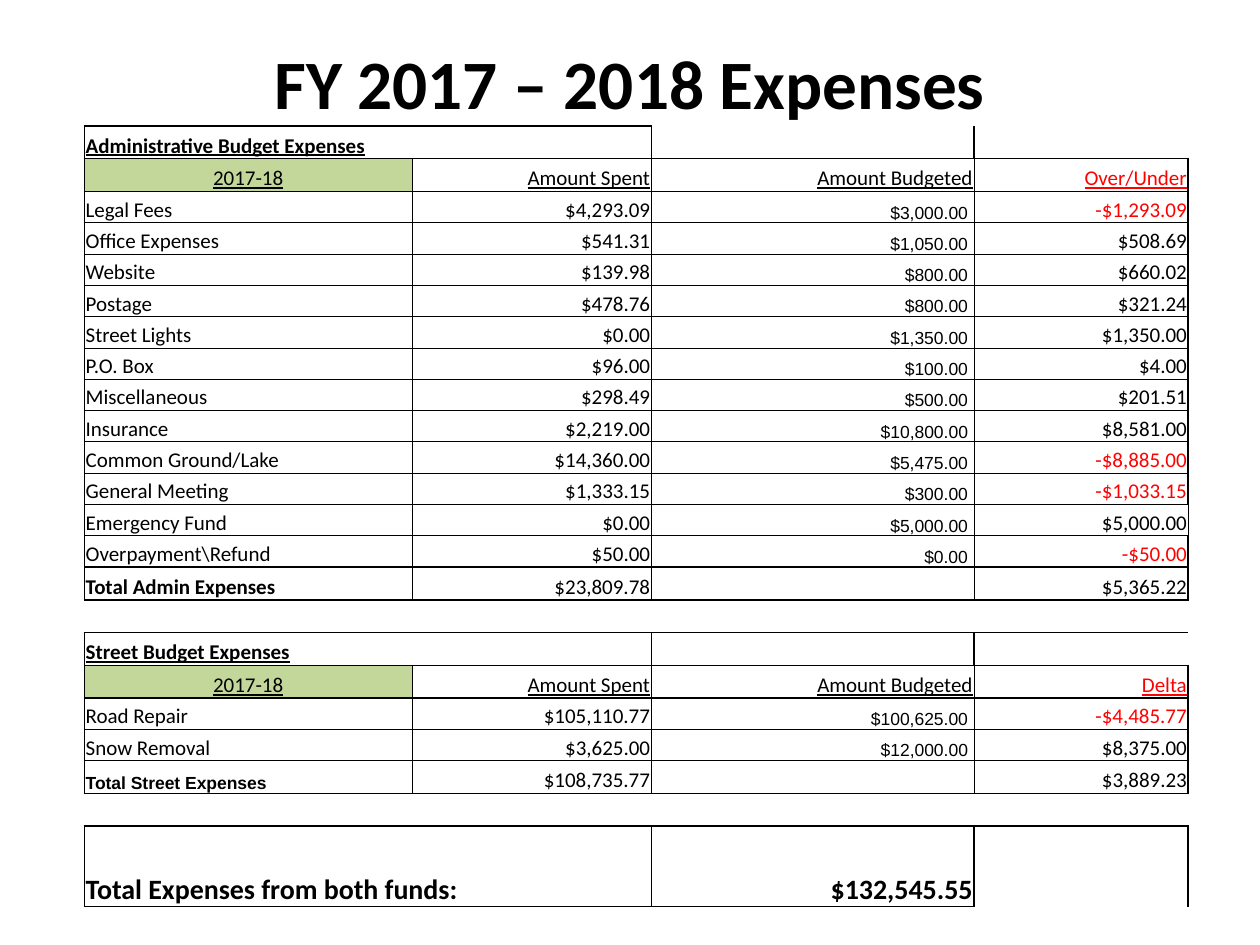
from dataclasses import dataclass
from enum import Enum

from lxml.etree import SubElement
from pptx import Presentation
from pptx.dml.color import RGBColor
from pptx.enum.text import MSO_ANCHOR, PP_ALIGN
from pptx.oxml.ns import qn
from pptx.util import Inches, Pt

BLACK, WHITE, RED, GREEN = "000000", "FFFFFF", "FF0000", "C4D79B"
NO_STYLE = "{2D5ABB26-0587-4C30-8999-92F81FD0307C}"
COLUMN_WIDTHS = (1.01, 1.59, 1.9, 2.56, 1.7)
TABLE_HEIGHT, GRAND_HEIGHT, PLAIN_HEIGHT = 6.2, 0.64, 0.26
BUDGET, DIFFERENCE = 3, 4
THIN, THICK = 0.5, 1


class Kind(Enum):
    """Row kinds, each with its merged label columns and its boxed columns."""

    SECTION = ("section", 3, 3)
    HEADER = ("header", 2, 5)
    ITEM = ("item", 2, 5)
    TOTAL = ("total", 2, 5)
    BLANK = ("blank", 1, 0)
    GRAND = ("grand", 3, 4)

    @property
    def label_span(self) -> int:
        return self.value[1]

    @property
    def boxed(self) -> int:
        return self.value[2]


@dataclass
class Row:
    """One table row: its kind, label, and the values after the label."""

    kind: Kind
    label: str = ""
    values: tuple[str, ...] = ()
    label_font: str = "Calibri"
    label_size: float = 12
    outer: float = THICK


def item(label: str, spent: str, budgeted: str, difference: str, outer: float = THICK) -> Row:
    """Return a row for one expense."""
    return Row(Kind.ITEM, label, (spent, budgeted + " ", difference), outer=outer)


def header(difference: str) -> Row:
    """Return a row of column headings."""
    return Row(Kind.HEADER, "2017-18", ("Amount Spent", "Amount Budgeted", difference))


ROWS = [
    Row(Kind.SECTION, "Administrative Budget Expenses"),
    header("Over/Under"),
    item("Legal Fees", "$4,293.09", "$3,000.00", "-$1,293.09"),
    item("Office Expenses", "$541.31", "$1,050.00", "$508.69"),
    item("Website", "$139.98", "$800.00", "$660.02"),
    item("Postage", "$478.76", "$800.00", "$321.24"),
    item("Street Lights", "$0.00", "$1,350.00", "$1,350.00"),
    item("P.O. Box", "$96.00", "$100.00", "$4.00"),
    item("Miscellaneous", "$298.49", "$500.00", "$201.51"),
    item("Insurance", "$2,219.00", "$10,800.00", "$8,581.00"),
    item("Common Ground/Lake", "$14,360.00", "$5,475.00", "-$8,885.00"),
    item("General Meeting", "$1,333.15", "$300.00", "-$1,033.15"),
    item("Emergency Fund", "$0.00", "$5,000.00", "$5,000.00", outer=THIN),
    item("Overpayment\\Refund", "$50.00", "$0.00", "-$50.00"),
    Row(Kind.TOTAL, "Total Admin Expenses", ("$23,809.78", "", "$5,365.22")),
    Row(Kind.BLANK),
    Row(Kind.SECTION, "Street Budget Expenses"),
    header("Delta"),
    item("Road Repair", "$105,110.77", "$100,625.00", "-$4,485.77"),
    item("Snow Removal", "$3,625.00", "$12,000.00", "$8,375.00"),
    Row(Kind.TOTAL, "Total Street Expenses", ("$108,735.77", "", "$3,889.23"), "Arial", 10),
    Row(Kind.BLANK),
    Row(Kind.GRAND, "Total Expenses from both funds:", ("$132,545.55",), label_size=16),
]


def color(value: str) -> RGBColor:
    """Turn a hex string into a colour."""
    return RGBColor.from_string(value)


def write(paragraph, text: str, font_name: str, size: float, ink: str = BLACK,
          bold: bool = False, underline: bool = False, align=PP_ALIGN.LEFT) -> None:
    """Fill a paragraph with text in one font."""
    paragraph.alignment = align
    font = paragraph.font
    font.name, font.size = font_name, Pt(size)
    font.bold, font.underline = bold, underline
    font.color.rgb = color(ink)
    if text:
        paragraph.add_run().text = text
    else:
        SubElement(paragraph._p, qn("a:endParaRPr"), sz=str(int(size * 100)))


def horizontal_edge(upper: int, column: int) -> float:
    """Return the line width below row number upper, or zero for none."""
    pair = [ROWS[index] for index in (upper, upper + 1) if 0 <= index < len(ROWS)]
    if not any(column < row.kind.boxed for row in pair):
        return 0
    return THIN if all(row.kind is Kind.ITEM for row in pair) and len(pair) == 2 else THICK


def vertical_edge(row: Row, column: int) -> float:
    """Return the line width left of a column, or zero for none."""
    if row.kind is Kind.BLANK or column > row.kind.boxed:
        return 0
    return row.outer if column in (0, row.kind.boxed) else THIN


def add_border(cell, side: str, width: float) -> None:
    """Draw one side of a cell."""
    line = SubElement(cell._tc.get_or_add_tcPr(), qn(f"a:ln{side}"), w=str(Pt(width)))
    fill = SubElement(line, qn("a:solidFill"))
    SubElement(fill, qn("a:srgbClr"), val=BLACK)


def format_cell(cell, row_number: int, column: int) -> None:
    """Set the margins, borders and fill of a cell."""
    row = ROWS[row_number]
    span = row.kind.label_span
    first, end = (0, span) if column < span else (column, column + 1)
    cell.margin_left = cell.margin_right = cell.margin_top = Inches(0.01)
    cell.margin_bottom = Inches(0)
    cell.vertical_anchor = MSO_ANCHOR.BOTTOM
    edges = {
        "L": vertical_edge(row, first),
        "R": vertical_edge(row, end),
        "T": horizontal_edge(row_number - 1, column),
        "B": horizontal_edge(row_number, column),
    }
    for side, width in edges.items():
        if width:
            add_border(cell, side, width)
    if row.kind is Kind.ITEM and column == BUDGET:
        cell.fill.background()
    else:
        cell.fill.solid()
        is_year = row.kind is Kind.HEADER and column < span
        cell.fill.fore_color.rgb = color(GREEN if is_year else WHITE)


def write_cell(cell, row: Row, column: int) -> None:
    """Write the text that belongs in a cell."""
    paragraph = cell.text_frame.paragraphs[0]
    kind = row.kind
    is_header, is_grand = kind is Kind.HEADER, kind is Kind.GRAND
    value_number = column - kind.label_span
    if column == 0 and row.label:
        write(paragraph, row.label, row.label_font, row.label_size,
              bold=kind in (Kind.SECTION, Kind.TOTAL, Kind.GRAND),
              underline=is_header or kind is Kind.SECTION,
              align=PP_ALIGN.CENTER if is_header else PP_ALIGN.LEFT)
    elif 0 <= value_number < len(row.values):
        text = row.values[value_number]
        is_red = text.startswith("-") or (is_header and column == DIFFERENCE)
        is_budget = kind is Kind.ITEM and column == BUDGET
        write(paragraph, text, "Arial" if is_budget else "Calibri",
              10 if is_budget else row.label_size if is_grand else 12,
              RED if is_red else BLACK, is_grand, is_header, PP_ALIGN.RIGHT)
    else:
        write(paragraph, "", "Calibri", 10)


def add_title(slide) -> None:
    """Add the slide title."""
    box = slide.shapes.add_textbox(Inches(0.5), Inches(0.3), Inches(9), Inches(0.7))
    frame = box.text_frame
    frame.word_wrap = True
    frame.vertical_anchor = MSO_ANCHOR.MIDDLE
    write(frame.paragraphs[0], "FY 2017 – 2018 Expenses", "Calibri", 39.6,
          bold=True, align=PP_ALIGN.CENTER)


def add_expenses(slide) -> None:
    """Add the table of expenses."""
    frame = slide.shapes.add_table(len(ROWS), len(COLUMN_WIDTHS), Inches(0.67), Inches(1),
                                   Inches(sum(COLUMN_WIDTHS)), Inches(TABLE_HEIGHT))
    table = frame.table
    table.first_row = table.horz_banding = False
    table._tbl.tblPr.find(qn("a:tableStyleId")).text = NO_STYLE
    for column, width in zip(table.columns, COLUMN_WIDTHS):
        column.width = Inches(width)
    items = sum(row.kind is Kind.ITEM for row in ROWS)
    plain = len(ROWS) - items - 1
    item_height = (TABLE_HEIGHT - GRAND_HEIGHT - plain * PLAIN_HEIGHT) / items
    heights = {Kind.ITEM: item_height, Kind.GRAND: GRAND_HEIGHT}
    for row_number, row in enumerate(ROWS):
        table.rows[row_number].height = Inches(heights.get(row.kind, PLAIN_HEIGHT))
        for column in range(len(COLUMN_WIDTHS)):
            cell = table.cell(row_number, column)
            format_cell(cell, row_number, column)
            write_cell(cell, row, column)
        if row.kind.label_span > 1:
            table.cell(row_number, 0).merge(table.cell(row_number, row.kind.label_span - 1))


def main() -> None:
    """Build and save the presentation."""
    presentation = Presentation()
    presentation.slide_width, presentation.slide_height = Inches(10), Inches(7.5)
    slide = presentation.slides.add_slide(presentation.slide_layouts[6])
    add_title(slide)
    add_expenses(slide)
    presentation.save("out.pptx")


if __name__ == "__main__":
    main()
